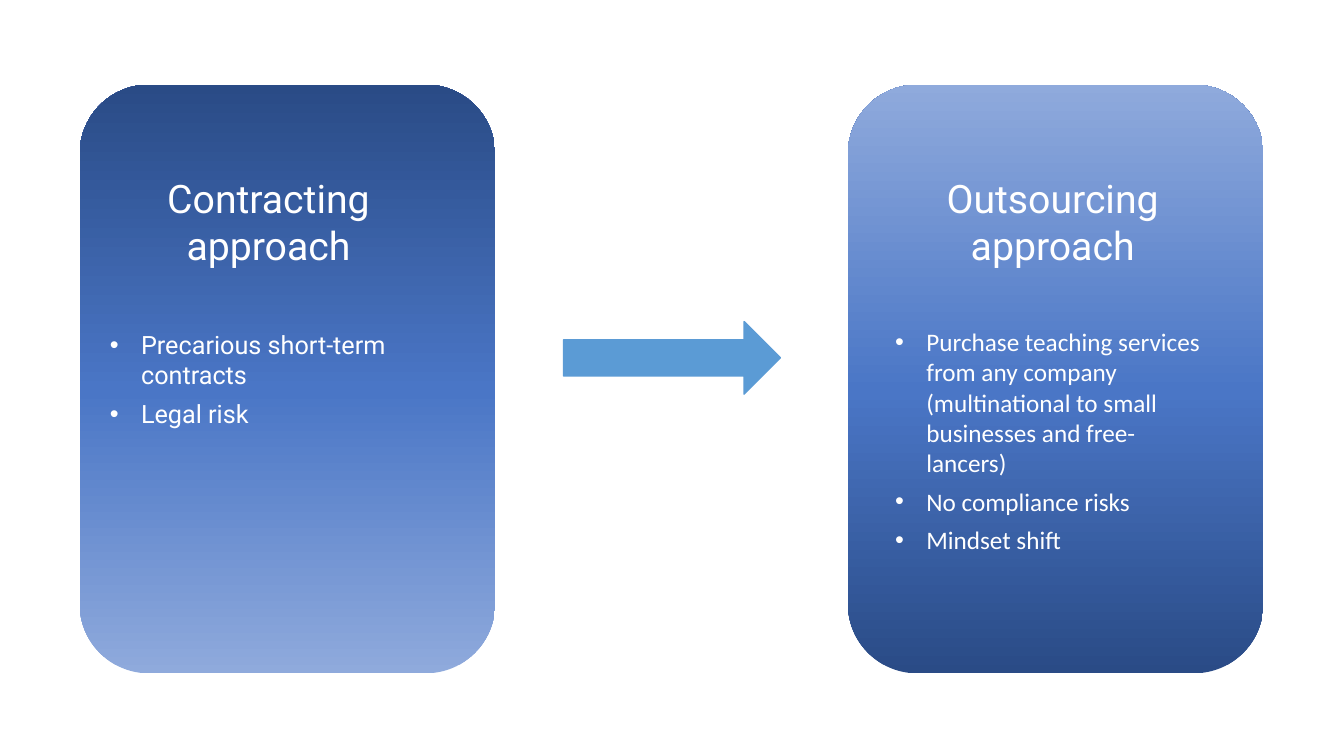
from copy import deepcopy

from lxml import etree
from pptx import Presentation
from pptx.dml.color import RGBColor
from pptx.enum.shapes import MSO_SHAPE
from pptx.enum.text import MSO_ANCHOR, MSO_AUTO_SIZE, PP_ALIGN
from pptx.oxml.ns import qn
from pptx.util import Inches, Pt

ROUNDED = MSO_SHAPE.ROUNDED_RECTANGLE
RIGHT_ARROW = MSO_SHAPE.RIGHT_ARROW
MIDDLE = MSO_ANCHOR.MIDDLE
GROW = MSO_AUTO_SIZE.SHAPE_TO_FIT_TEXT
LEFT, CENTER = PP_ALIGN.LEFT, PP_ALIGN.CENTER

WHITE = RGBColor(0xFF, 0xFF, 0xFF)
LIGHT = RGBColor(0x8F, 0xAA, 0xDC)
MEDIUM = RGBColor(0x4A, 0x76, 0xC6)
DARK = RGBColor(0x2A, 0x4B, 0x86)
ARROW_BLUE = RGBColor(0x5B, 0x9B, 0xD5)


class ApproachSlide:
    """Holds the text style and the slide being drawn."""

    heading_font = "Roboto"
    heading_size = Pt(28)
    bullet_size = Pt(18)
    bullet_indent = Inches(0.31)

    def __init__(self, page):
        self.shapes = page.shapes

    def shape(self, kind, left, top, width, height):
        shape = self.shapes.add_shape(
            kind, Inches(left), Inches(top), Inches(width), Inches(height))
        shape.shadow.inherit = False
        return shape

    def panel(self, left, bottom_color, top_color):
        panel = self.shape(ROUNDED, left, 0.84, 4.12, 5.84)
        panel.line.fill.background()
        panel.fill.gradient()
        panel.fill.gradient_angle = 90
        # A third stop goes between the two default ones
        first_stop = panel.element.find(".//" + qn("a:gs"))
        first_stop.addnext(deepcopy(first_stop))
        colors = (bottom_color, MEDIUM, top_color)
        for stop, position, color in zip(panel.fill.gradient_stops, (0, 0.48, 1), colors):
            stop.position = position
            stop.color.rgb = color
        return panel

    def arrow(self, left, top, width, height):
        arrow = self.shape(RIGHT_ARROW, left, top, width, height)
        arrow.fill.solid()
        arrow.fill.fore_color.rgb = ARROW_BLUE
        arrow.line.color.rgb = ARROW_BLUE
        arrow.line.width = Pt(1)

    def text_box(self, left, top, width, height, wrap=True):
        box = self.shapes.add_textbox(
            Inches(left), Inches(top), Inches(width), Inches(height))
        box.text_frame.word_wrap = wrap
        box.text_frame.auto_size = GROW
        return box

    def fill_text(self, frame, lines, font_name, size, alignments):
        frame.text = "\n".join(lines)
        for para, alignment in zip(frame.paragraphs, alignments):
            para.alignment = alignment
            para.font.name = font_name
            para.font.size = size
            para.font.color.rgb = WHITE

    def heading(self, box, lines, alignments):
        self.fill_text(box.text_frame, lines, self.heading_font, self.heading_size, alignments)

    def bullets(self, shape, lines, font_name):
        frame = shape.text_frame
        self.fill_text(frame, lines, font_name, self.bullet_size, [LEFT] * len(lines))
        for para in frame.paragraphs:
            para.space_before = Pt(6)
            properties = para._p.get_or_add_pPr()
            properties.set("marL", str(self.bullet_indent))
            properties.set("indent", str(-self.bullet_indent))
            # Bullet marks precede the default run properties
            marks = [etree.Element(qn("a:buFont"), typeface="Arial"),
                     etree.Element(qn("a:buChar"), char="•")]
            run_defaults = properties.find(qn("a:defRPr"))
            for mark in marks:
                run_defaults.addprevious(mark)


def main():
    deck = Presentation()
    deck.slide_width, deck.slide_height = Inches(13.33), Inches(7.5)
    page = deck.slides.add_slide(deck.slide_layouts[6])
    slide = ApproachSlide(page)

    # Panels and the arrow between them
    contracting = slide.panel(0.79, LIGHT, DARK)
    contracting.text_frame.vertical_anchor = MIDDLE
    slide.bullets(contracting, ["Precarious short-term contracts", "Legal risk"], "Roboto")
    slide.panel(8.41, DARK, LIGHT)
    slide.arrow(5.59, 3.19, 2.15, 0.72)

    # Headings
    slide.heading(slide.text_box(1.56, 1.68, 2.58, 1.04, wrap=False),
                  ["Contracting", "approach"], [LEFT, CENTER])
    slide.heading(slide.text_box(9.18, 1.68, 2.52, 1.04),
                  ["Outsourcing approach"], [CENTER])

    # Outsourcing points
    slide.bullets(slide.text_box(8.78, 3.19, 3.34, 2.39), [
        "Purchase teaching services from any company "
        "(multinational to small businesses and free-lancers)",
        "No compliance risks",
        "Mindset shift",
    ], "Calibri")

    deck.save("out.pptx")


if __name__ == "__main__":
    main()
